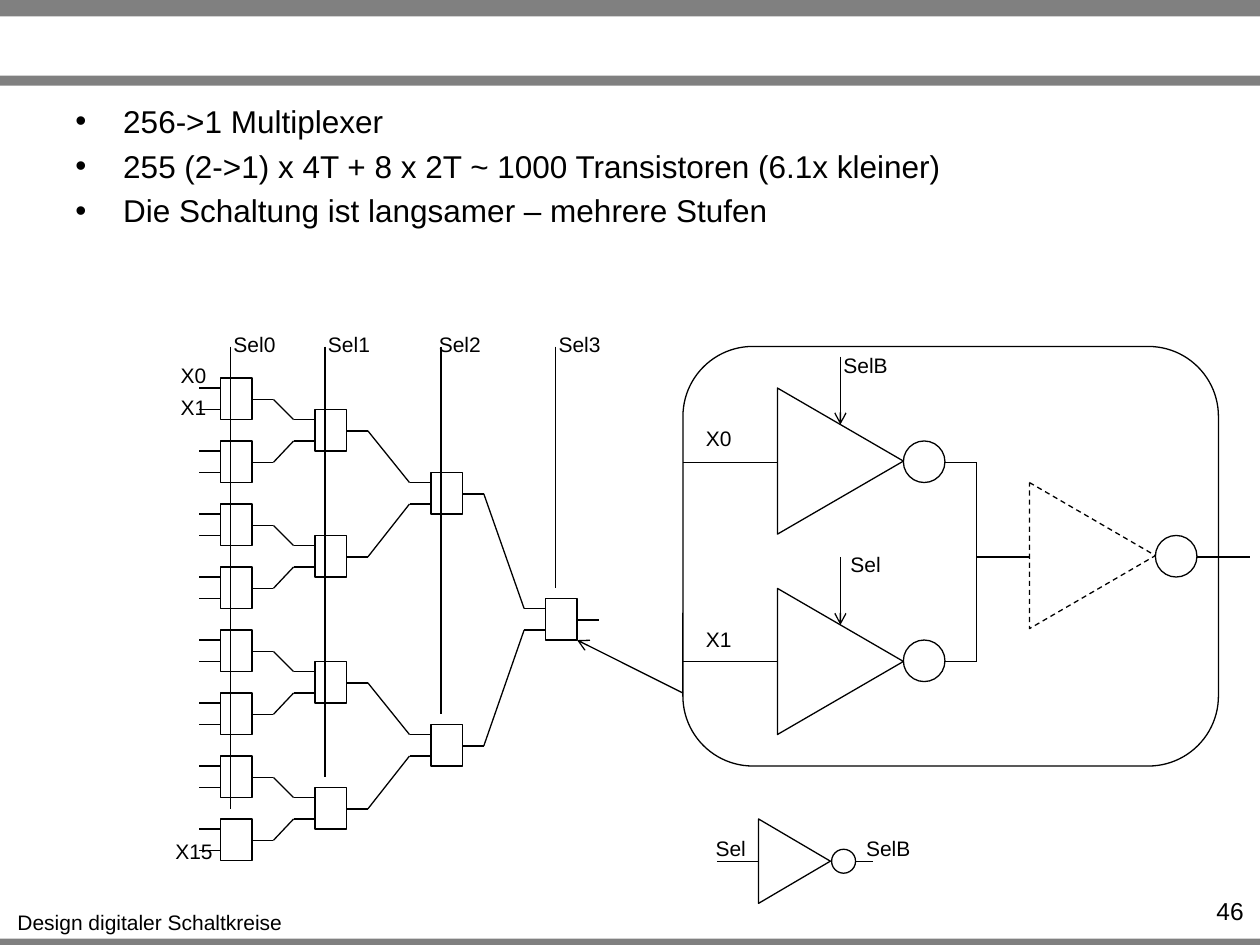
"""Build the slide on a 256-to-1 multiplexer made of 2-to-1 stages."""
from lxml.etree import SubElement
from pptx import Presentation
from pptx.dml.color import RGBColor
from pptx.enum.dml import MSO_LINE
from pptx.enum.shapes import MSO_CONNECTOR, MSO_SHAPE
from pptx.enum.text import MSO_ANCHOR, PP_ALIGN
from pptx.oxml.ns import qn
from pptx.util import Inches, Pt

BLACK = RGBColor(0x00, 0x00, 0x00)
WHITE = RGBColor(0xFF, 0xFF, 0xFF)
GRAY = RGBColor(0x80, 0x80, 0x80)

prs = Presentation()
prs.slide_width, prs.slide_height = Inches(10), Inches(7.5)
s = prs.slides.add_slide(prs.slide_layouts[6])


def add_text(text, x, y, w, h=0.3, size=12, align=PP_ALIGN.CENTER, wrap=False, bullet=False):
    tf = s.shapes.add_textbox(Inches(x), Inches(y), Inches(w), Inches(h)).text_frame
    tf.word_wrap = wrap
    tf.vertical_anchor = MSO_ANCHOR.TOP
    for i, row in enumerate(text.split("\n")):
        p = tf.paragraphs[0] if i == 0 else tf.add_paragraph()
        p.alignment = align
        if i:
            p.space_before = Pt(4)
        if bullet:
            pPr = p._p.get_or_add_pPr()
            pPr.set("marL", str(Inches(0.38)))
            pPr.set("indent", str(Inches(-0.38)))
            SubElement(pPr, qn("a:buFont")).set("typeface", "Arial")
            SubElement(pPr, qn("a:buChar")).set("char", "•")
        r = p.add_run()
        r.text = row
        r.font.name, r.font.size = "Arial", Pt(size)
        r.font.color.rgb = BLACK


def add_line(x1, y1, x2, y2, arrow=False):
    c = s.shapes.add_connector(MSO_CONNECTOR.STRAIGHT, Inches(x1), Inches(y1), Inches(x2), Inches(y2))
    c.line.color.rgb, c.line.width = BLACK, Pt(0.75)
    if arrow:
        SubElement(c.line._get_or_add_ln(), qn("a:tailEnd")).set("type", "arrow")
    SubElement(c._element.spPr, qn("a:effectLst"))


for y, h in [(7.45, 0.08), (0, 0.13), (0.6, 0.08)]:
    bar = s.shapes.add_shape(MSO_SHAPE.RECTANGLE, 0, Inches(y), Inches(10), Inches(h))
    bar.shadow.inherit = False
    bar.fill.solid()
    bar.fill.fore_color.rgb = GRAY
    bar.line.fill.background()

add_text("Design digitaler Schaltkreise", 0.03, 7.17, 2.32)
add_text(
    "256->1 Multiplexer\n"
    "255 (2->1) x 4T + 8 x 2T ~ 1000 Transistoren (6.1x kleiner)\n"
    "Die Schaltung ist langsamer – mehrere Stufen",
    0.5, 0.76, 9, 0.74, size=18, align=PP_ALIGN.LEFT, wrap=True, bullet=True)
add_text("46", 9.1, 7.06, 0.87, 0.24, size=14, align=PP_ALIGN.RIGHT, wrap=True)

outlines = []
stage_x = [1.75, 2.5, 3.42, 4.33]
for stage, x in enumerate(stage_x):
    pitch = 0.5 * 2 ** stage
    for i in range(8 // 2 ** stage):
        y = 2.75 + pitch / 2 + i * pitch
        outlines.append((MSO_SHAPE.RECTANGLE, x, y, 0.25, 0.33))
        for dy in (0.08, 0.25):
            add_line(x - 0.17, y + dy, x, y + dy)
        add_line(x + 0.25, y + 0.17, x + 0.42, y + 0.17)
        if stage < 3:
            next_y = 2.75 + pitch + i // 2 * 2 * pitch
            add_line(x + 0.42, y + 0.17, stage_x[stage + 1] - 0.17, next_y + (0.08, 0.25)[i % 2])
    add_line(x + 0.08, 2.75, x + 0.08, y - 0.08)

for x1, y1, x2, y2 in [
    (7.17, 3.67, 7.75, 3.67), (7.17, 5.25, 7.75, 5.25),
    (7.75, 3.67, 7.75, 5.25), (7.75, 4.42, 8.17, 4.42),
    (5.42, 3.67, 6.17, 3.67), (5.42, 5.25, 6.17, 5.25),
    (9.5, 4.42, 9.92, 4.42), (6.6, 6.84, 6.93, 6.84), (5.69, 6.84, 6.02, 6.84),
]:
    add_line(x1, y1, x2, y2)
for x1, y1, x2, y2 in [(6.67, 2.83, 6.67, 3.37), (6.67, 4.42, 6.67, 4.96), (5.42, 5.5, 4.58, 5.08)]:
    add_line(x1, y1, x2, y2, arrow=True)

for x, y, d in [(7.17, 3.5, 0.33), (7.17, 5.08, 0.33), (9.17, 4.25, 0.33), (6.6, 6.74, 0.19)]:
    outlines.append((MSO_SHAPE.OVAL, x, y, d, d))
for x, y, w, h in [(6.09, 3.16, 1.16, 1), (6.09, 4.75, 1.16, 1), (8.09, 3.91, 1.16, 1), (5.97, 6.55, 0.67, 0.57)]:
    outlines.append((MSO_SHAPE.ISOSCELES_TRIANGLE, x, y, w, h))
outlines.append((MSO_SHAPE.ROUNDED_RECTANGLE, 5.42, 2.75, 4.25, 3.33))

for kind, x, y, w, h in outlines:
    sp = s.shapes.add_shape(kind, Inches(x), Inches(y), Inches(w), Inches(h))
    sp.shadow.inherit = False
    sp.line.color.rgb, sp.line.width = BLACK, Pt(0.75)
    if kind == MSO_SHAPE.OVAL:
        sp.fill.solid()
        sp.fill.fore_color.rgb = WHITE
    else:
        sp.fill.background()
    if kind == MSO_SHAPE.ISOSCELES_TRIANGLE:
        sp.rotation = 90
        if x > 8:
            sp.line.dash_style = MSO_LINE.DASH

for text, x, y, w in [
    ("Sel0", 1.75, 2.58, 0.54), ("Sel1", 2.5, 2.58, 0.54),
    ("Sel2", 3.38, 2.58, 0.54), ("Sel3", 4.33, 2.58, 0.54),
    ("X0", 1.33, 2.83, 0.41), ("X1", 1.33, 3.08, 0.41), ("X15", 1.29, 6.61, 0.5),
    ("SelB", 6.59, 2.75, 0.56), ("Sel", 6.65, 4.33, 0.44),
    ("X0", 5.5, 3.33, 0.41), ("X1", 5.5, 4.92, 0.41),
    ("Sel", 5.58, 6.58, 0.44), ("SelB", 6.77, 6.58, 0.56),
]:
    add_text(text, x, y, w)

prs.save("out.pptx")
